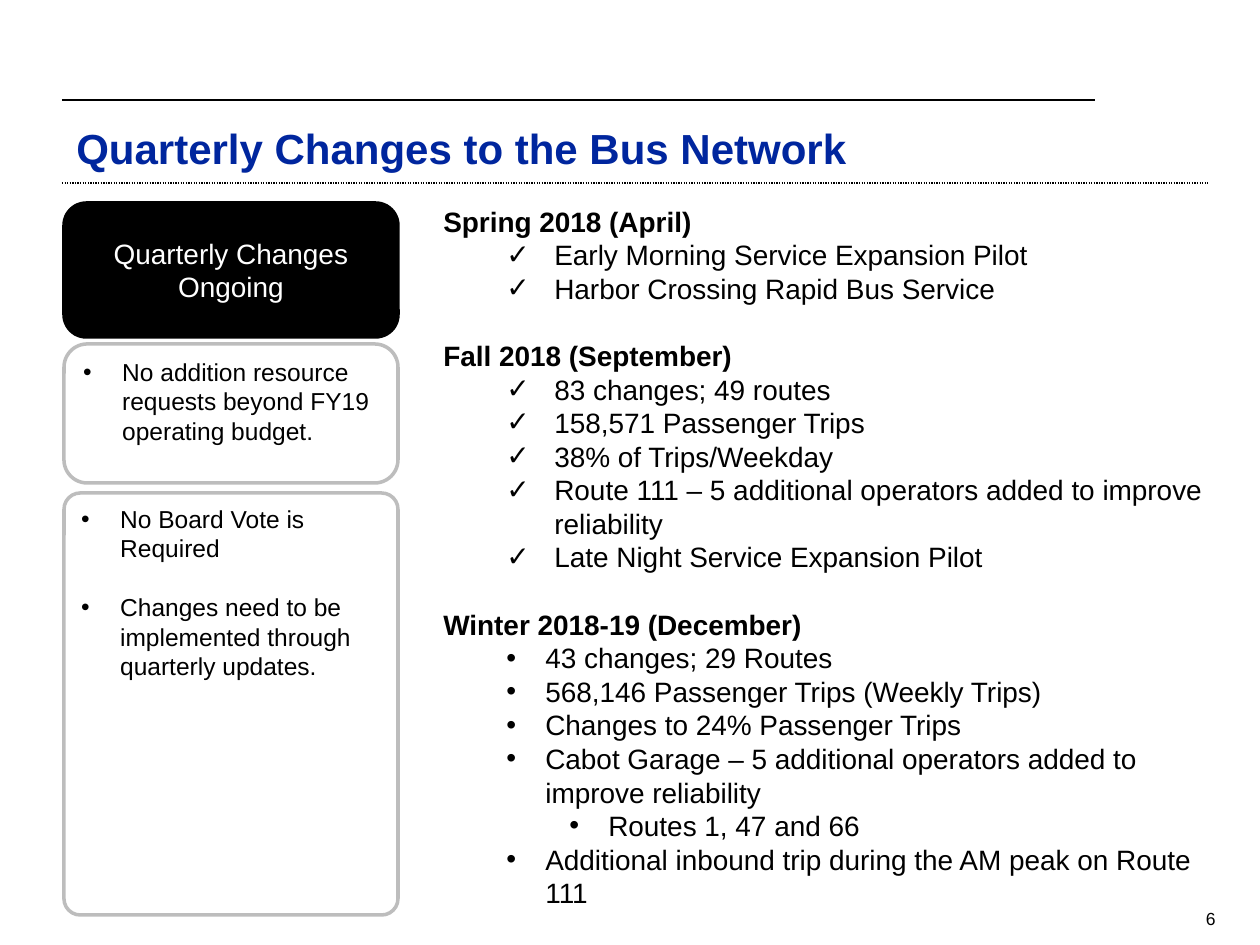
"""Build the slide on quarterly changes to the bus network."""
from lxml import etree
from pptx import Presentation
from pptx.dml.color import RGBColor
from pptx.enum.dml import MSO_LINE
from pptx.enum.shapes import MSO_CONNECTOR, MSO_SHAPE
from pptx.enum.text import MSO_ANCHOR, PP_ALIGN
from pptx.oxml.ns import qn
from pptx.util import Emu, Pt

STRAIGHT = MSO_CONNECTOR.STRAIGHT
ROUNDED = MSO_SHAPE.ROUNDED_RECTANGLE
DOTTED = MSO_LINE.ROUND_DOT
TOP, MIDDLE, BOTTOM = MSO_ANCHOR.TOP, MSO_ANCHOR.MIDDLE, MSO_ANCHOR.BOTTOM
LEFT, CENTER, RIGHT = PP_ALIGN.LEFT, PP_ALIGN.CENTER, PP_ALIGN.RIGHT

BLACK = RGBColor(0x00, 0x00, 0x00)
WHITE = RGBColor(0xFF, 0xFF, 0xFF)
NAVY = RGBColor(0x00, 0x26, 0x9E)
GRAY = RGBColor(0xBD, 0xBD, 0xBD)

FONT = "Arial"
PX = 914400 / 126
LINE_HEIGHT = 1.2

HEADING = {"bold": True}
CHECK = {"bullet": "✓", "margin": 111, "hang": 48}
DOT = {"bullet": "•", "margin": 102, "hang": 39}
SUBDOT = {"bullet": "•", "margin": 165, "hang": 39}
NOTE = {"bullet": "•", "margin": 39, "hang": 39}

TITLE = ["Quarterly Changes to the Bus Network"]
PAGE_NUMBER = ["6"]
STATUS = ["Quarterly Changes", "Ongoing"]
BUDGET_NOTES = ["No addition resource requests beyond FY19 operating budget."]
APPROVAL_NOTES = [
    "No Board Vote is Required",
    "Changes need to be implemented through quarterly updates.",
]
SEASONS = [
    ("Spring 2018 (April)", [
        (CHECK, "Early Morning Service Expansion Pilot"),
        (CHECK, "Harbor Crossing Rapid Bus Service"),
    ]),
    ("Fall 2018 (September)", [
        (CHECK, "83 changes; 49 routes"),
        (CHECK, "158,571 Passenger Trips"),
        (CHECK, "38% of Trips/Weekday"),
        (CHECK, "Route 111 – 5 additional operators added to improve reliability"),
        (CHECK, "Late Night Service Expansion Pilot"),
    ]),
    ("Winter 2018-19 (December)", [
        (DOT, "43 changes; 29 Routes"),
        (DOT, "568,146 Passenger Trips (Weekly Trips)"),
        (DOT, "Changes to 24% Passenger Trips"),
        (DOT, "Cabot Garage – 5 additional operators added to improve reliability"),
        (SUBDOT, "Routes 1, 47 and 66"),
        (DOT, "Additional inbound trip during the AM peak on Route 111"),
    ]),
]

RULES = [
    (62, 1208, 183, 0.75, DOTTED),
    (62, 1095, 100, 1, None),
]
CARD_LEFT, CARD_WIDTH = 64, 334
CARDS = [
    (203, 134, 0.167, BLACK, BLACK, [({}, line) for line in STATUS],
     {"size": 16, "color": WHITE, "align": CENTER, "anchor": MIDDLE}),
    (493, 422, 0.049, WHITE, GRAY, [(NOTE, note) for note in APPROVAL_NOTES],
     {"size": 14, "gaps": {1}}),
    (344, 139, 0.167, WHITE, GRAY, [(NOTE, note) for note in BUDGET_NOTES],
     {"size": 14}),
]


def px(*lengths):
    return [Emu(round(length * PX)) for length in lengths]


def set_bullet(paragraph, bullet, margin, hang):
    properties = paragraph._p.get_or_add_pPr()
    properties.set("marL", str(round(margin * PX)))
    properties.set("indent", str(-round(hang * PX)))
    etree.SubElement(properties, qn("a:buFont")).set("typeface", FONT)
    etree.SubElement(properties, qn("a:buChar")).set("char", bullet)


def write(shape, lines, size, color=BLACK, bold=False, align=LEFT, anchor=TOP, gaps=()):
    frame = shape.text_frame
    frame.word_wrap = True
    frame.vertical_anchor = anchor
    for index, (style, text) in enumerate(lines):
        paragraph = frame.add_paragraph() if index else frame.paragraphs[0]
        if "bullet" in style:
            set_bullet(paragraph, **style)
        paragraph.alignment = align
        if index in gaps:
            paragraph.space_before = Pt(size * LINE_HEIGHT)
        run = paragraph.add_run()
        run.text = text
        look = {"name": FONT, "size": Pt(size), "bold": style.get("bold", bold)}
        for key, value in look.items():
            setattr(run.font, key, value)
        run.font.color.rgb = color


def add_rule(slide, left, right, y, weight, dash):
    rule = slide.shapes.add_connector(STRAIGHT, *px(left, y, right, y))
    rule.line.color.rgb = BLACK
    rule.line.width = Pt(weight)
    if dash:
        rule.line.dash_style = dash
    etree.SubElement(rule._element.spPr, qn("a:effectLst"))


def add_card(slide, top, height, rounding, fill, border, lines, style):
    card = slide.shapes.add_shape(ROUNDED, *px(CARD_LEFT, top, CARD_WIDTH, height))
    card.adjustments[0] = rounding
    card.shadow.inherit = False
    card.fill.solid()
    card.fill.fore_color.rgb = fill
    card.line.color.rgb = border
    card.line.width = Pt(2)
    write(card, lines, **style)


def season_lines():
    lines, gaps = [], set()
    for heading, changes in SEASONS:
        if lines:
            gaps.add(len(lines))
        lines += [(HEADING, heading), *changes]
    return lines, gaps


def main():
    deck = Presentation()
    deck.slide_width, deck.slide_height = px(1260, 945)
    slide = deck.slides.add_slide(deck.slide_layouts[6])
    for rule in RULES:
        add_rule(slide, *rule)
    changes, gaps = season_lines()
    texts = [
        ((1123, 902, 105, 32), [({}, line) for line in PAGE_NUMBER],
         {"size": 10, "align": RIGHT, "anchor": MIDDLE}),
        ((64, 115, 1144, 64), [({}, line) for line in TITLE],
         {"size": 24, "color": NAVY, "bold": True, "anchor": BOTTOM}),
        ((431, 198, 809, 793), changes, {"size": 16, "gaps": gaps}),
    ]
    for box, lines, style in texts:
        write(slide.shapes.add_textbox(*px(*box)), lines, **style)
    for card in CARDS:
        add_card(slide, *card)
    deck.save("out.pptx")


if __name__ == "__main__":
    main()
